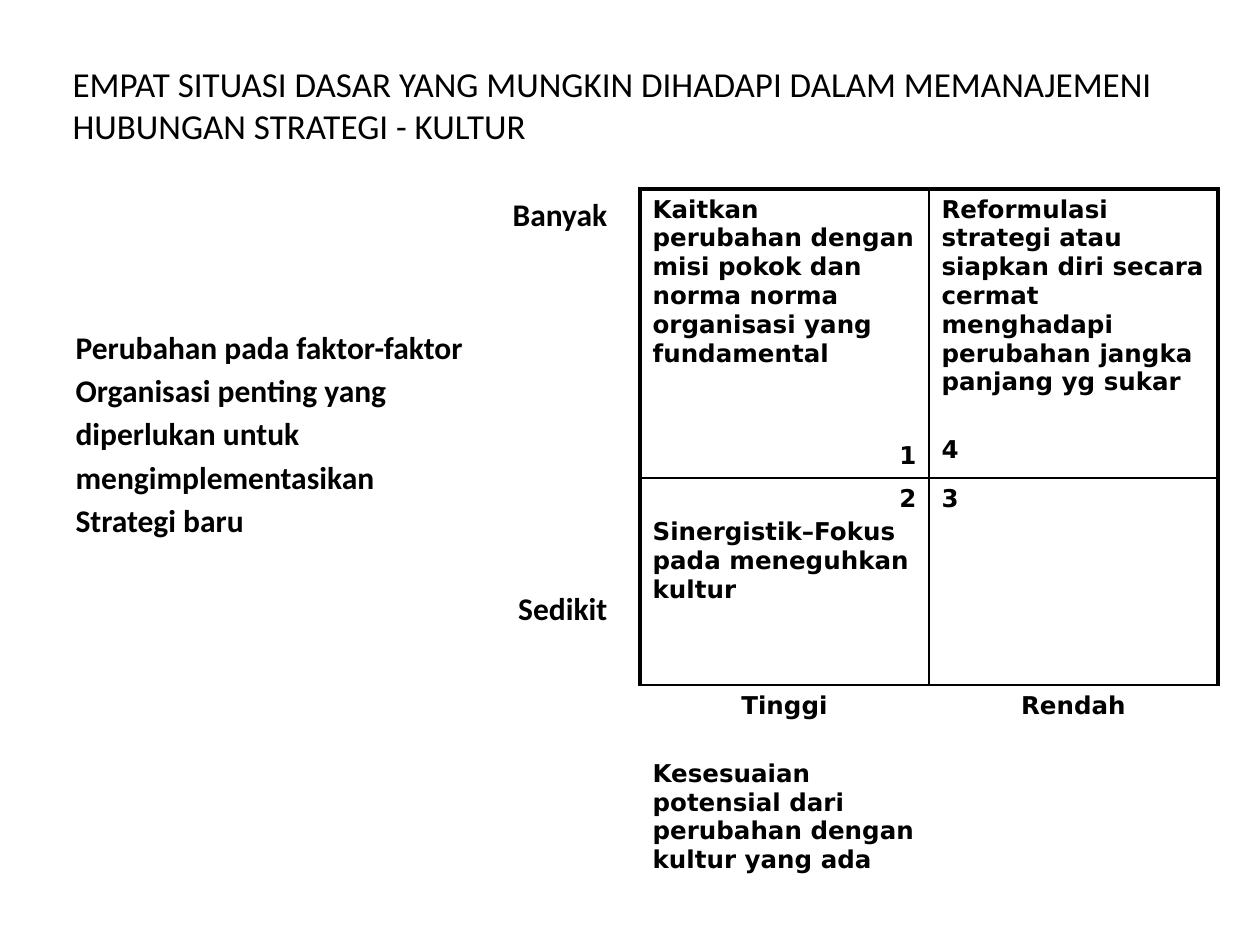
from dataclasses import dataclass

from lxml.etree import SubElement
from pptx import Presentation
from pptx.dml.color import RGBColor
from pptx.enum.text import MSO_ANCHOR, MSO_AUTO_SIZE, PP_ALIGN
from pptx.oxml import parse_xml
from pptx.oxml.ns import nsdecls, qn
from pptx.util import Emu, Pt

EMU_PER_PX = 914400 / 126
NO_STYLE_NO_GRID = "{2D5ABB26-0587-4C30-8999-92F81FD0307C}"
LEFT, CENTER, RIGHT = PP_ALIGN.LEFT, PP_ALIGN.CENTER, PP_ALIGN.RIGHT


@dataclass(frozen=True)
class Theme:
    ink: str = "000000"
    text_font: str = "Calibri"
    table_font: str = "DejaVu Sans"
    title_size: int = 20
    body_size: int = 18
    table_size: int = 14
    body_gap: float = 3.2
    table_gap: float = 2.6
    outer_border: float = 2.25
    inner_border: float = 1


THEME = Theme()

TITLE = ("EMPAT SITUASI DASAR YANG MUNGKIN DIHADAPI DALAM MEMANAJEMENI "
         "HUBUNGAN STRATEGI - KULTUR")

# Each paragraph: text, alignment, space before in points
BODY = [
    ("Banyak", RIGHT, THEME.body_gap),
    ("Perubahan pada faktor-faktor", LEFT, 54),
    ("Organisasi penting yang", LEFT, THEME.body_gap),
    ("diperlukan untuk", LEFT, THEME.body_gap),
    ("mengimplementasikan", LEFT, THEME.body_gap),
    ("Strategi baru", LEFT, THEME.body_gap),
    ("Sedikit", RIGHT, 28.3),
]

MATRIX = [
    [
        [("Kaitkan perubahan dengan misi pokok dan norma norma organisasi "
          "yang fundamental", LEFT, THEME.table_gap),
         ("1", RIGHT, 42)],
        [("Reformulasi strategi atau siapkan diri secara cermat menghadapi "
          "perubahan jangka panjang yg sukar", LEFT, THEME.table_gap),
         ("4", LEFT, 22.5)],
    ],
    [
        [("2", RIGHT, THEME.table_gap),
         ("Sinergistik–Fokus pada meneguhkan kultur", LEFT, THEME.table_gap)],
        [("3", LEFT, THEME.table_gap)],
    ],
    [
        [("Tinggi", CENTER, THEME.table_gap),
         ("Kesesuaian potensial dari perubahan dengan kultur yang ada", LEFT, 22.5)],
        [("Rendah", CENTER, THEME.table_gap)],
    ],
]
AXIS_ROW = len(MATRIX) - 1


def px(length):
    return Emu(round(length * EMU_PER_PX))


def place(shape, box):
    shape.left, shape.top, shape.width, shape.height = map(px, box)


def format_runs(paragraph, font_name, size, bold):
    for run in paragraph.runs:
        run.font.name = font_name
        run.font.size = Pt(size)
        run.font.bold = bold
        run.font.color.rgb = RGBColor.from_string(THEME.ink)


def write_paragraphs(text_frame, paragraphs, font_name, size):
    text_frame.text = "\n".join(text for text, _, _ in paragraphs)
    for paragraph, (_, alignment, gap) in zip(text_frame.paragraphs, paragraphs):
        paragraph.alignment = alignment
        paragraph.space_before = Pt(gap)
        format_runs(paragraph, font_name, size, True)


def fill_title(shape, box):
    place(shape, box)
    text_frame = shape.text_frame
    text_frame.text = TITLE
    text_frame.auto_size = MSO_AUTO_SIZE.NONE
    text_frame.vertical_anchor = MSO_ANCHOR.MIDDLE
    paragraph = text_frame.paragraphs[0]
    paragraph.alignment = LEFT
    format_runs(paragraph, THEME.text_font, THEME.title_size, False)


def fill_body(shape, box):
    place(shape, box)
    text_frame = shape.text_frame
    write_paragraphs(text_frame, BODY, THEME.text_font, THEME.body_size)
    text_frame.auto_size = MSO_AUTO_SIZE.NONE
    for paragraph in text_frame.paragraphs:
        properties = paragraph._p.get_or_add_pPr()
        properties.set("marL", "0")
        properties.set("indent", "0")
        SubElement(properties, qn("a:buNone"))


def set_borders(cell, widths):
    """Draw cell borders; widths maps L, R, T, B (in that order) to points."""
    properties = cell._tc.get_or_add_tcPr()
    for position, (side, width) in enumerate(widths.items()):
        properties.insert(position, parse_xml(
            f'<a:ln{side} {nsdecls("a")} w="{Pt(width)}"><a:solidFill>'
            f'<a:srgbClr val="{THEME.ink}"/></a:solidFill></a:ln{side}>'))


def border_widths(row, column):
    outer, inner = THEME.outer_border, THEME.inner_border
    if row == AXIS_ROW:
        return {"T": inner}
    return {
        "L": outer if column == 0 else inner,
        "R": inner if column == 0 else outer,
        "T": outer if row == 0 else inner,
        "B": inner,
    }


def add_matrix(slide, box, row_heights):
    frame = slide.shapes.add_table(len(MATRIX), len(MATRIX[0]), *map(px, box))
    table = frame.table
    table.first_row = table.horz_banding = False
    table._tbl.tblPr.find(qn("a:tableStyleId")).text = NO_STYLE_NO_GRID
    for column in table.columns:
        column.width = px(box[2] // len(table.columns))
    for row, height in zip(table.rows, row_heights):
        row.height = px(height)
    for row_index, row_content in enumerate(MATRIX):
        for column_index, paragraphs in enumerate(row_content):
            cell = table.cell(row_index, column_index)
            cell.fill.background()
            write_paragraphs(cell.text_frame, paragraphs,
                             THEME.table_font, THEME.table_size)
            set_borders(cell, border_widths(row_index, column_index))


def main():
    presentation = Presentation()
    presentation.slide_width, presentation.slide_height = px(1260), px(945)
    slide = presentation.slides.add_slide(presentation.slide_layouts[1])
    fill_title(slide.shapes.title, (60, 14, 1137, 181))
    fill_body(slide.placeholders[1], (63, 189, 557, 655))
    add_matrix(slide, (640, 189, 578, 732), (289, 207, 236))
    presentation.save("out.pptx")


if __name__ == "__main__":
    main()
